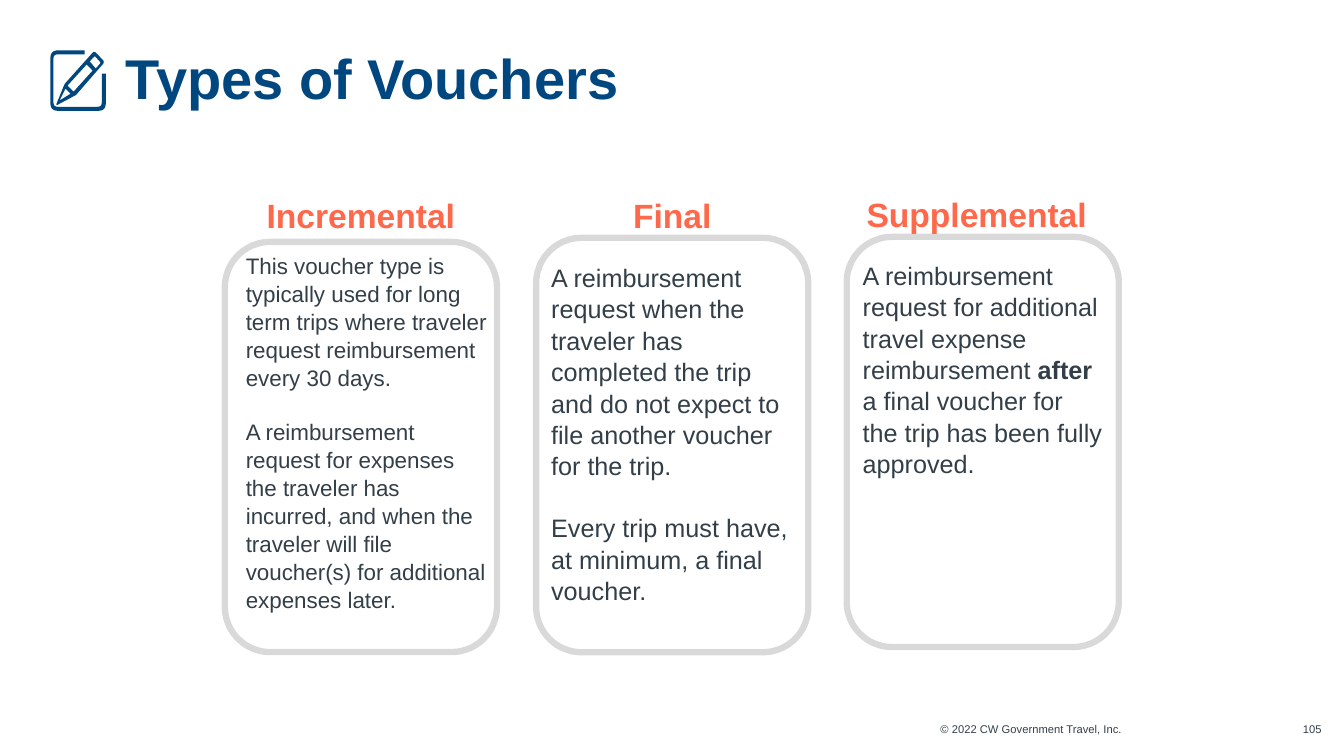
"""Build the slide describing the three types of travel vouchers."""
import pptx
import pptx.dml.color
import pptx.enum.shapes
import pptx.enum.text
import pptx.util

Pt = pptx.util.Pt
RGBColor = pptx.dml.color.RGBColor
ALIGN = pptx.enum.text.PP_ALIGN
ANCHOR = pptx.enum.text.MSO_ANCHOR

NAVY = RGBColor(0x00, 0x46, 0x7F)
CORAL = RGBColor(0xFF, 0x69, 0x4B)
SLATE = RGBColor(0x33, 0x3F, 0x48)
GREY = RGBColor(0xD9, 0xD9, 0xD9)
FONT = "Arial"

TITLE = "Types of Vouchers"
FOOTERS = [
    ("© 2022 CW Government Travel, Inc.", (603.4, 516.2, 198, 10.1)),
    ("105", (927.4, 516.2, 16.6, 10.1)),
]
VOUCHERS = [
    {
        "heading": "Incremental", "heading_box": (173.5, 134.6, 168.5, 36),
        "card": (160.6, 172.8, 194.4, 293),
        "body_box": (168.5, 175.7, 186.5, 300), "size": 16,
        "body": [
            ["This voucher type is typically used for long term trips where "
             "traveler request reimbursement every 30 days."],
            ["A reimbursement request for expenses the traveler has incurred, and "
             "when the traveler will file voucher(s) for additional expenses later."],
        ],
    },
    {
        "heading": "Final", "heading_box": (396, 134.6, 168.5, 36),
        "card": (383, 169.9, 194.4, 296),
        "body_box": (386.6, 182.9, 186.5, 247), "size": 18,
        "body": [
            ["A reimbursement request when the traveler has completed the trip "
             "and do not expect to file another voucher for the trip."],
            ["Every trip must have, at minimum, a final voucher."],
        ],
    },
    {
        "heading": "Supplemental", "heading_box": (609.1, 133.9, 177.1, 36),
        "card": (604.8, 169.2, 194.4, 293),
        "body_box": (609.1, 181.4, 186.5, 160), "size": 18,
        "body": [
            ["A reimbursement request for additional travel expense reimbursement ",
             "after ", "a final voucher for the trip has been fully approved."],
        ],
    },
]

# Each vertex is x, y and corner radius.
ICON_CONTOURS = [
    [(75.6, 52.6, 0), (72.7, 52.6, 0), (72.7, 76.3, 3), (38.2, 76.3, 3),
     (38.2, 38.9, 3), (60.5, 38.9, 0), (60.5, 36, 0), (36, 36, 5.5),
     (36, 79.2, 5.5), (75.6, 79.2, 5.5)],
    [(46.1, 60.1, 1), (39.8, 75.6, 2), (54.3, 67.9, 1), (74.8, 44.3, 2),
     (67.3, 36.4, 2)],
    [(67.7, 40, 1), (72, 44.8, 1), (68.4, 49, 0), (64.1, 43.9, 0)],
    [(61.9, 46.1, 0), (66.2, 50.4, 0), (52.6, 65.5, 0), (48.2, 61.2, 0)],
    [(50.4, 67, 0), (42.6, 71.8, 1), (46.8, 63.4, 0)],
]
LINE_SPACING = 1.04
CURVE_STEPS = 8


def toward(start, end, distance):
    dx, dy = end[0] - start[0], end[1] - start[1]
    share = distance / (dx * dx + dy * dy) ** 0.5
    return start[0] + dx * share, start[1] + dy * share


def rounded(vertices):
    outline = []
    for i, corner in enumerate(vertices):
        radius = corner[2]
        if not radius:
            outline.append(corner[:2])
            continue
        entry = toward(corner, vertices[i - 1], radius)
        leave = toward(corner, vertices[(i + 1) % len(vertices)], radius)
        for step in range(CURVE_STEPS + 1):
            t = step / CURVE_STEPS
            outline.append(tuple(
                (1 - t) ** 2 * a + 2 * t * (1 - t) * b + t * t * c
                for a, b, c in zip(entry, corner, leave)))
    return [(Pt(x), Pt(y)) for x, y in outline]


def draw_icon(slide):
    outlines = [rounded(contour) for contour in ICON_CONTOURS]
    builder = slide.shapes.build_freeform(*outlines[0][0])
    for outline in outlines:
        if outline is not outlines[0]:
            builder.move_to(*outline[0])
        builder.add_line_segments(outline[1:], close=True)
    icon = builder.convert_to_shape()
    icon.shadow.inherit = False
    icon.fill.solid()
    icon.fill.fore_color.rgb = NAVY
    icon.line.fill.background()


def style(font, size, color, bold=False):
    font.name = FONT
    font.size = Pt(size)
    font.color.rgb = color
    font.bold = bold


def clear_margins(frame):
    frame.margin_left = frame.margin_right = 0
    frame.margin_top = frame.margin_bottom = 0


def add_text(slide, box, paragraphs, size, color, bold=False,
             align=ALIGN.LEFT, spacing=LINE_SPACING):
    frame = slide.shapes.add_textbox(*map(Pt, box)).text_frame
    frame.word_wrap = True
    for i, pieces in enumerate(paragraphs):
        paragraph = frame.add_paragraph() if i else frame.paragraphs[0]
        paragraph.alignment = align
        paragraph.line_spacing = spacing
        if i:
            paragraph.space_before = Pt(size * 1.2)
        for j, piece in enumerate(pieces):
            run = paragraph.add_run()
            run.text = piece
            style(run.font, size, color, bold or j == 1)
    return frame


def add_title(slide):
    title = slide.shapes.title
    title.left, title.top, title.width, title.height = map(Pt, (90, 38.2, 830.2, 66.2))
    frame = title.text_frame
    frame.text = TITLE
    frame.word_wrap = True
    frame.vertical_anchor = ANCHOR.TOP
    clear_margins(frame)
    heading = frame.paragraphs[0]
    heading.alignment = ALIGN.LEFT
    heading.line_spacing = 0.85
    style(heading.runs[0].font, 40, NAVY, True)


def add_voucher(slide, voucher):
    card = slide.shapes.add_shape(
        pptx.enum.shapes.MSO_SHAPE.ROUNDED_RECTANGLE, *map(Pt, voucher["card"]))
    card.shadow.inherit = False
    card.fill.background()
    card.line.color.rgb = GREY
    card.line.width = Pt(4.5)
    add_text(slide, voucher["heading_box"], [[voucher["heading"]]], 24, CORAL,
             True, ALIGN.CENTER)
    add_text(slide, voucher["body_box"], voucher["body"], voucher["size"], SLATE)


def main():
    deck = pptx.Presentation()
    deck.slide_width, deck.slide_height = Pt(960), Pt(540)
    slide = deck.slides.add_slide(deck.slide_layouts[5])
    draw_icon(slide)
    add_title(slide)
    for voucher in VOUCHERS:
        add_voucher(slide, voucher)
    for words, box in FOOTERS:
        clear_margins(add_text(slide, box, [[words]], 8, SLATE,
                               align=ALIGN.RIGHT, spacing=1.0))
    deck.save("out.pptx")


if __name__ == "__main__":
    main()
